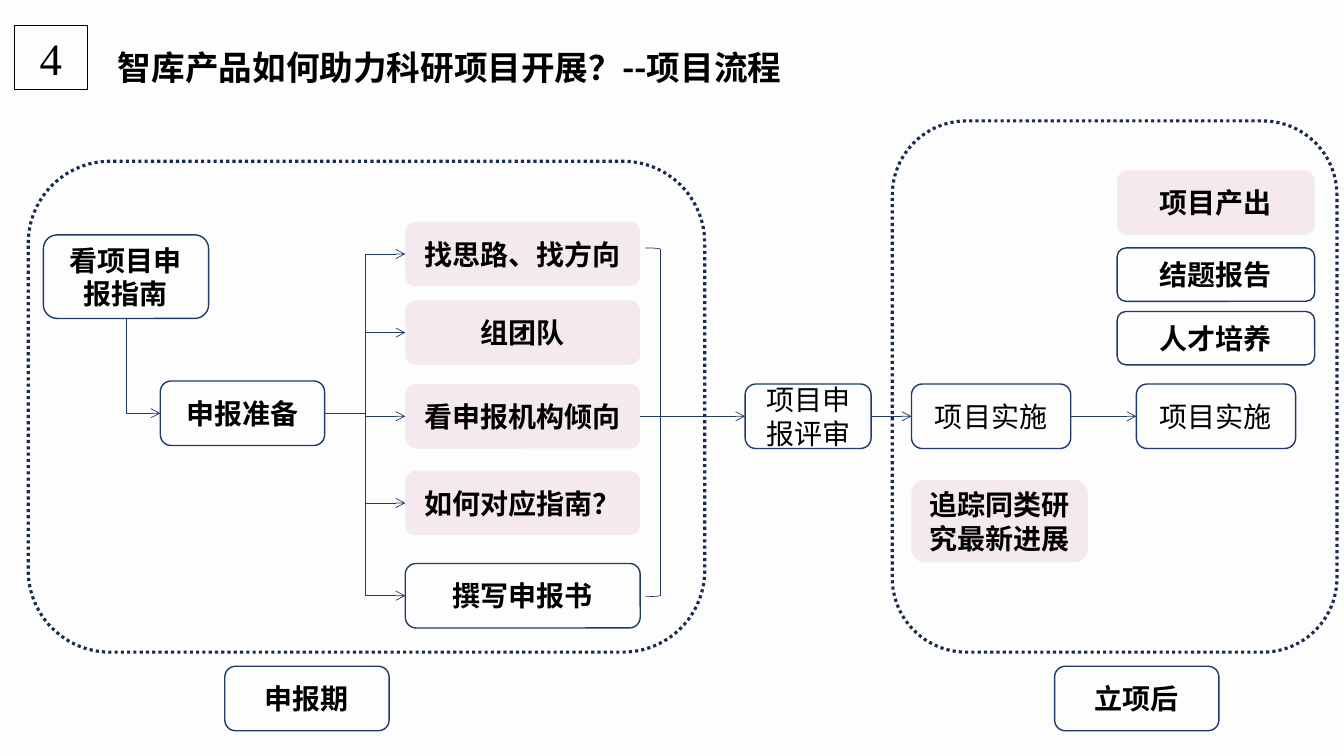
from lxml import etree
from pptx import Presentation
from pptx import util as u
from pptx.dml.color import RGBColor
from pptx.enum import dml, shapes, text
from pptx.oxml.ns import qn

PX = 9144  # EMU per px, 100 px to the inch
COLORS = {
    "page": "FDFDFD",
    "ink": "000000",
    "navy": "213969",
    "frame": "182A4E",
    "pink": "F3E9EE",
}
CJK = "Noto Sans CJK SC"
BOTTOM, LEFT, RIGHT = 2, 1, 3
ELBOW = shapes.MSO_CONNECTOR.ELBOW
STRAIGHT = shapes.MSO_CONNECTOR.STRAIGHT


def rgb(name):
    return RGBColor.from_string(COLORS[name])


def inside(box, x, y, w, h):
    """Turn a place relative to box into a place on the slide."""
    return box[0] + x, box[1] + y, w, h


def write(tf, content, size, font="Arial", bold=False, align=text.PP_ALIGN.CENTER):
    tf.word_wrap = True
    p = tf.paragraphs[0]
    p.alignment = align
    r = p.add_run()
    r.text = content
    for key, value in {"size": u.Pt(size), "bold": bold, "name": font}.items():
        setattr(r.font, key, value)
    r.font.color.rgb = rgb("ink")
    etree.SubElement(r.font._element, qn("a:ea")).set("typeface", CJK)
    return p


def outline(line, color, width, dash=None):
    line.color.rgb = rgb(color)
    line.width = u.Pt(width)
    if dash:
        line.dash_style = dash


def add_plain(s, kind, box):
    """Add a shape with no shadow, fill or text."""
    sp = s.shapes.add_shape(kind, *(v * PX for v in box))
    sp.shadow.inherit = False
    sp.fill.background()
    return sp


def add_step(s, content, box, pink=False, bold=True):
    sp = add_plain(s, shapes.MSO_SHAPE.ROUNDED_RECTANGLE, box)
    if pink:
        sp.fill.solid()
        sp.fill.fore_color.rgb = rgb("pink")
        sp.line.fill.background()
    else:
        outline(sp.line, "navy", 1)
    sp.text_frame.vertical_anchor = text.MSO_ANCHOR.MIDDLE
    write(sp.text_frame, content, 20, bold=bold)
    return sp


def add_frame(s, box):
    sp = add_plain(s, shapes.MSO_SHAPE.ROUNDED_RECTANGLE, box)
    outline(sp.line, "frame", 2.25, dml.MSO_LINE.ROUND_DOT)


def add_arrow(s, start, end, kind=STRAIGHT, start_side=RIGHT):
    cx = s.shapes.add_connector(kind, 0, 0, 0, 0)
    cx.begin_connect(start, start_side)
    cx.end_connect(end, LEFT)
    outline(cx.line, "navy", 0.5)
    etree.SubElement(cx.line._get_or_add_ln(), qn("a:tailEnd")).set("type", "arrow")
    etree.SubElement(cx._element.spPr, qn("a:effectLst"))
    return cx


def add_corner_arrow(s, start, end):
    """Go down from the bottom of start, then right into end."""
    cx = add_arrow(s, start, end, ELBOW, BOTTOM)
    x, y, across, down = cx.left, cx.top, cx.width, cx.height
    cx.left, cx.top = x + (across - down) // 2, y + (down - across) // 2
    cx.width, cx.height = down, across
    sp_pr = cx._element.spPr
    xfrm = sp_pr.find(qn("a:xfrm"))
    xfrm.set("rot", str(270 * 60000))
    xfrm.set("flipH", "1")
    sp_pr.find(qn("a:prstGeom")).set("prst", "bentConnector2")


def heading(s, box):
    sp = add_plain(s, shapes.MSO_SHAPE.RECTANGLE, inside(box, 0, 3, 73, 64))
    outline(sp.line, "ink", 0.25)
    sp.text_frame.vertical_anchor = text.MSO_ANCHOR.MIDDLE
    write(sp.text_frame, "4", 32, "Times New Roman")

    title = s.shapes.title
    place = inside(box, 93, 0, box[2] - 93, box[3])
    for key, value in zip(("left", "top", "width", "height"), place):
        setattr(title, key, value * PX)
    tf = title.text_frame
    tf.auto_size = text.MSO_AUTO_SIZE.NONE
    tf.vertical_anchor = text.MSO_ANCHOR.TOP
    p = write(tf, "智库产品如何助力科研项目开展？--项目流程", 24, CJK, True,
              text.PP_ALIGN.LEFT)
    p.line_spacing = 1.5


def application_stage(s, box):
    """Draw the application period and return the task that leads on."""
    add_frame(s, box)
    guide = add_step(s, "看项目申报指南", inside(box, 15, 73, 164, 83))
    prepare = add_step(s, "申报准备", inside(box, 131, 218, 163, 64))
    add_corner_arrow(s, guide, prepare)

    tasks = {}
    for name, y, pink in (
        ("找思路、找方向", 60, True),
        ("组团队", 138, True),
        ("看申报机构倾向", 221, True),
        ("如何对应指南？", 307, True),
        ("撰写申报书", 399, False),
    ):
        tasks[name] = add_step(s, name, inside(box, 374, y, 233, 64), pink)
        add_arrow(s, prepare, tasks[name], ELBOW)

    bracket = add_plain(s, shapes.MSO_SHAPE.RIGHT_BRACKET,
                        inside(box, 612, 86, 15, 346))
    outline(bracket.line, "navy", 0.5)
    add_step(s, "申报期", inside(box, 195, box[3] + 14, 163, 64))
    return tasks["看申报机构倾向"]


def funded_stage(s, box):
    """Draw the period after approval and return its first step."""
    add_frame(s, box)
    first, second = (
        add_step(s, "项目实施", inside(box, x, 261, 158, 64), bold=False)
        for x in (19, 242)
    )
    add_arrow(s, first, second)
    add_step(s, "追踪同类研究最新进展", inside(box, 19, 356, 175, 82), pink=True)
    for name, y, h, pink in (
        ("项目产出", 49, 64, True),
        ("结题报告", 126, 53, False),
        ("人才培养", 189, 53, False),
    ):
        add_step(s, name, inside(box, 223, y, 196, h), pink)
    add_step(s, "立项后", inside(box, 161, box[3] + 14, 163, 64))
    return first


def main():
    prs = Presentation()
    prs.slide_width, prs.slide_height = u.Inches(13.33), u.Inches(7.5)
    s = prs.slides.add_slide(prs.slide_layouts[5])
    s.background.fill.solid()
    s.background.fill.fore_color.rgb = rgb("page")

    heading(s, (14, 22, 1195, 71))
    task = application_stage(s, (28, 160, 671, 487))
    review = add_step(s, "项目申报评审", (739, 381, 125, 64), bold=False)
    start = funded_stage(s, (885, 120, 441, 527))
    add_arrow(s, task, review)
    add_arrow(s, review, start)
    prs.save("out.pptx")


if __name__ == "__main__":
    main()
